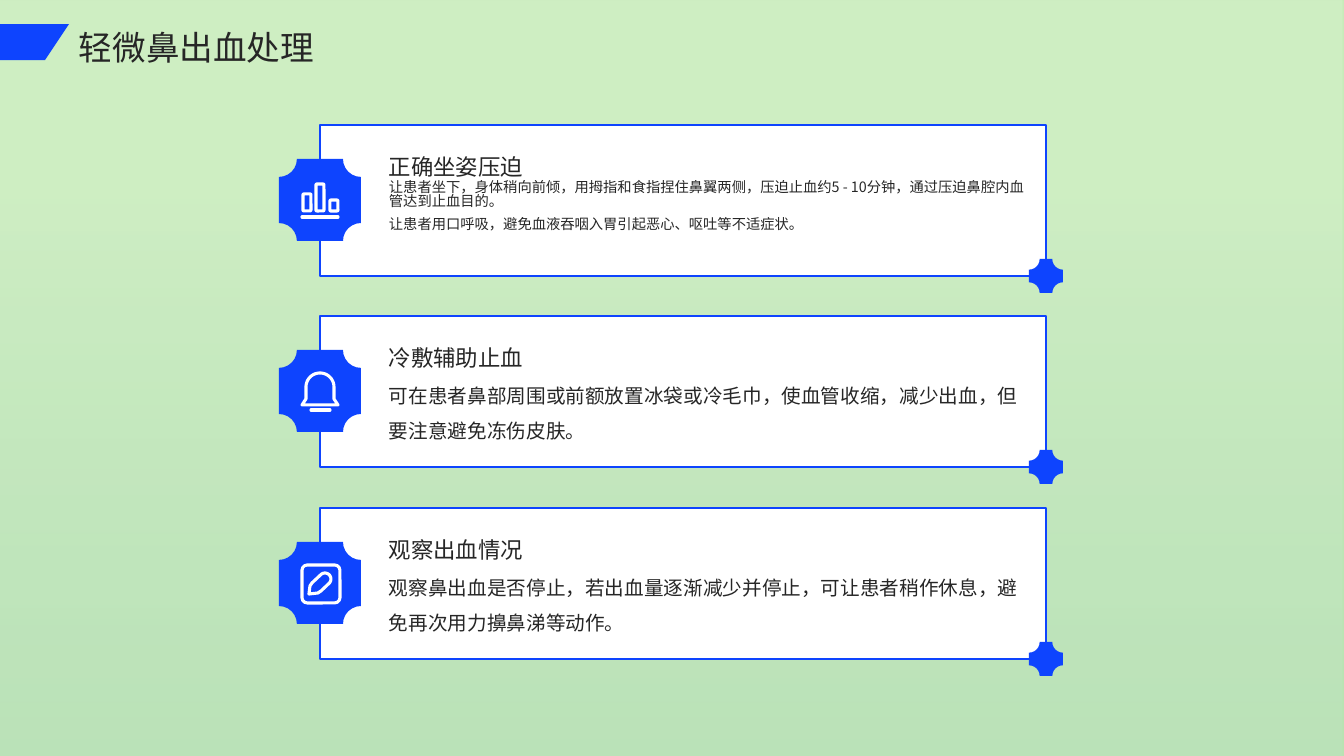
import math

import pptx
import pptx.dml.color
import pptx.enum.dml
import pptx.enum.shapes
import pptx.enum.text
import pptx.oxml
import pptx.oxml.ns
import pptx.util
from lxml import etree

PX = 914400 / 100.8  # EMU in one px
FONT = "Noto Sans CJK SC"
COLORS = {"page": "B4E5A2", "haze": "CFDAFF", "white": "FFFFFF",
          "accent": "0E44FE", "text": "262626"}
SHAPES = pptx.enum.shapes.MSO_SHAPE
ANCHORS = pptx.enum.text.MSO_ANCHOR


def emu(*lengths):
    return [pptx.util.Emu(round(length * PX)) for length in lengths]


def color(name):
    return pptx.dml.color.RGBColor.from_string(COLORS[name])


def sub(parent, tag, **attributes):
    return etree.SubElement(parent, pptx.oxml.ns.qn(tag), **attributes)


def paint(shape, fill=None, line=None, width=1):
    shape.shadow.inherit = False
    if fill:
        shape.fill.solid()
        shape.fill.fore_color.rgb = color(fill)
    else:
        shape.fill.background()
    if line:
        shape.line.color.rgb = color(line)
        shape.line.width = pptx.util.Pt(width)
    else:
        shape.line.fill.background()


def add_preset(slide, kind, box, adjust=None, **look):
    shape = slide.shapes.add_shape(kind, *emu(*box))
    if adjust is not None:
        shape.adjustments[0] = adjust
    paint(shape, **look)


def add_outline(slide, left, top, points, **look):
    corners = [emu(left + x, top + y) for x, y in points]
    builder = slide.shapes.build_freeform(*corners[0])
    builder.add_line_segments(corners[1:], close=True)
    paint(builder.convert_to_shape(), **look)


def add_stroke(slide, left, top, x1, x2, y):
    stroke = slide.shapes.add_connector(
        pptx.enum.shapes.MSO_CONNECTOR.STRAIGHT,
        *emu(left + x1, top + y, left + x2, top + y))
    stroke.line.color.rgb = color("white")
    stroke.line.width = pptx.util.Pt(2.2)
    stroke.line._get_or_add_ln().set("cap", "rnd")
    sub(stroke.element.spPr, "a:effectLst")


def add_text(slide, box, lines, size, spacing, gap=0, inset=0, anchor=ANCHORS.TOP):
    frame = slide.shapes.add_textbox(*emu(*box)).text_frame
    frame.word_wrap = True
    frame.vertical_anchor = anchor
    if not inset:
        frame.margin_left = frame.margin_right = 0
        frame.margin_top = frame.margin_bottom = 0
    for i, line in enumerate(lines):
        paragraph = frame.add_paragraph() if i else frame.paragraphs[0]
        paragraph.line_spacing = spacing
        if i:
            paragraph.space_before = pptx.util.Pt(gap)
        run = paragraph.add_run()
        run.text = line
        run.font.size = pptx.util.Pt(size)
        run.font.name = FONT
        run.font.color.rgb = color("text")
        sub(run.font._element, "a:ea", typeface=FONT)


def arc(cx, cy, radius, start, end):
    angles = [math.radians(start + (end - start) * i / 24) for i in range(25)]
    return [(cx + radius * math.cos(a), cy + radius * math.sin(a)) for a in angles]


# Icons, each inside a 40 px square
WHITE_LINE = {"line": "white", "width": 2.2}


def bars_icon(slide, left, top):
    for x, y in ((3, 14), (16, 4), (30, 20)):
        add_preset(slide, SHAPES.ROUNDED_RECTANGLE, (left + x, top + y, 8, 31 - y),
                   0.12, **WHITE_LINE)
    add_stroke(slide, left, top, 2, 38, 37)


def bell_icon(slide, left, top):
    dome = arc(20, 16, 14, 180, 360)
    add_outline(slide, left, top, [(2, 34), (6, 28), *dome, (34, 28), (38, 34)],
                **WHITE_LINE)
    add_stroke(slide, left, top, 11, 30, 39)


def pen_icon(slide, left, top):
    add_preset(slide, SHAPES.ROUNDED_RECTANGLE, (left + 2, top + 2, 38, 38),
               0.14, **WHITE_LINE)
    nib = [(21, 28), (18, 30), (9, 31), (10, 23), (12, 20)]
    add_outline(slide, left, top, arc(25, 16, 6, -135, 45) + nib, **WHITE_LINE)


# Page background with a translucent gradient over it
def add_background(slide, width, height):
    slide.background.fill.solid()
    slide.background.fill.fore_color.rgb = color("page")
    haze = slide.shapes.add_shape(SHAPES.RECTANGLE, *emu(0, 0, width, height))
    paint(haze)
    haze.fill.gradient()
    haze.fill.gradient_angle = 90
    stops = ((0, "haze", 23), (0.76, "white", 35))
    for stop, (position, name, _) in zip(haze.fill.gradient_stops, stops):
        stop.position = position
        stop.color.rgb = color(name)
    tints = haze.element.spPr.iter(pptx.oxml.ns.qn("a:srgbClr"))
    for tint, (_, _, opacity) in zip(tints, stops):
        sub(tint, "a:alpha", val=str(opacity * 1000))


# Title with its slanted flag
def add_title(slide, left, top, title):
    add_outline(slide, left, top + 6, [(0, 0), (69, 0), (45, 36), (0, 36)], fill="accent")
    add_text(slide, (left + 69, top, 1180, 46), [title], 24, 1.1, inset=1)


# One card: frame, badge with icon, corner ornament, heading and body
def add_card(slide, box, icon, heading, body, size, spacing):
    left, top, width, height = box
    middle = top + height // 2
    add_preset(slide, SHAPES.RECTANGLE, box, fill="white", line="accent")
    add_preset(slide, SHAPES.PLAQUE, (left - 41, middle - 41, 82, 82), 0.219, fill="accent")
    add_preset(slide, SHAPES.PLAQUE, (left + width - 17, top + height - 17, 34, 34),
               0.314, fill="accent")
    icon(slide, left - 20, middle - 20)
    add_text(slide, (left + 69, top + 14, 637, 41), [heading], 16, 1.3,
             anchor=ANCHORS.BOTTOM)
    add_text(slide, (left + 69, top + 56, 637, 83), body, size, spacing, gap=6.5)


CARDS = [
    (bars_icon, "正确坐姿压迫",
     ["让患者坐下，身体稍向前倾，用拇指和食指捏住鼻翼两侧，压迫止血约5 - 10分钟，通过压迫鼻腔内血管达到止血目的。",
      "让患者用口呼吸，避免血液吞咽入胃引起恶心、呕吐等不适症状。"], 10.2, 0.82),
    (bell_icon, "冷敷辅助止血",
     ["可在患者鼻部周围或前额放置冰袋或冷毛巾，使血管收缩，减少出血，但要注意避免冻伤皮肤。"], 14, 1.5),
    (pen_icon, "观察出血情况",
     ["观察鼻出血是否停止，若出血量逐渐减少并停止，可让患者稍作休息，避免再次用力擤鼻涕等动作。"], 14, 1.5),
]


def main():
    deck = pptx.Presentation()
    deck.slide_width, deck.slide_height = emu(1344, 756)
    slide = deck.slides.add_slide(deck.slide_layouts[6])
    add_background(slide, 1344, 756)
    for i, card in enumerate(CARDS):
        add_card(slide, (320, 125 + i * 383 // 2, 726, 151), *card)
    add_title(slide, 0, 18, "轻微鼻出血处理")
    deck.save("out.pptx")


if __name__ == "__main__":
    main()
